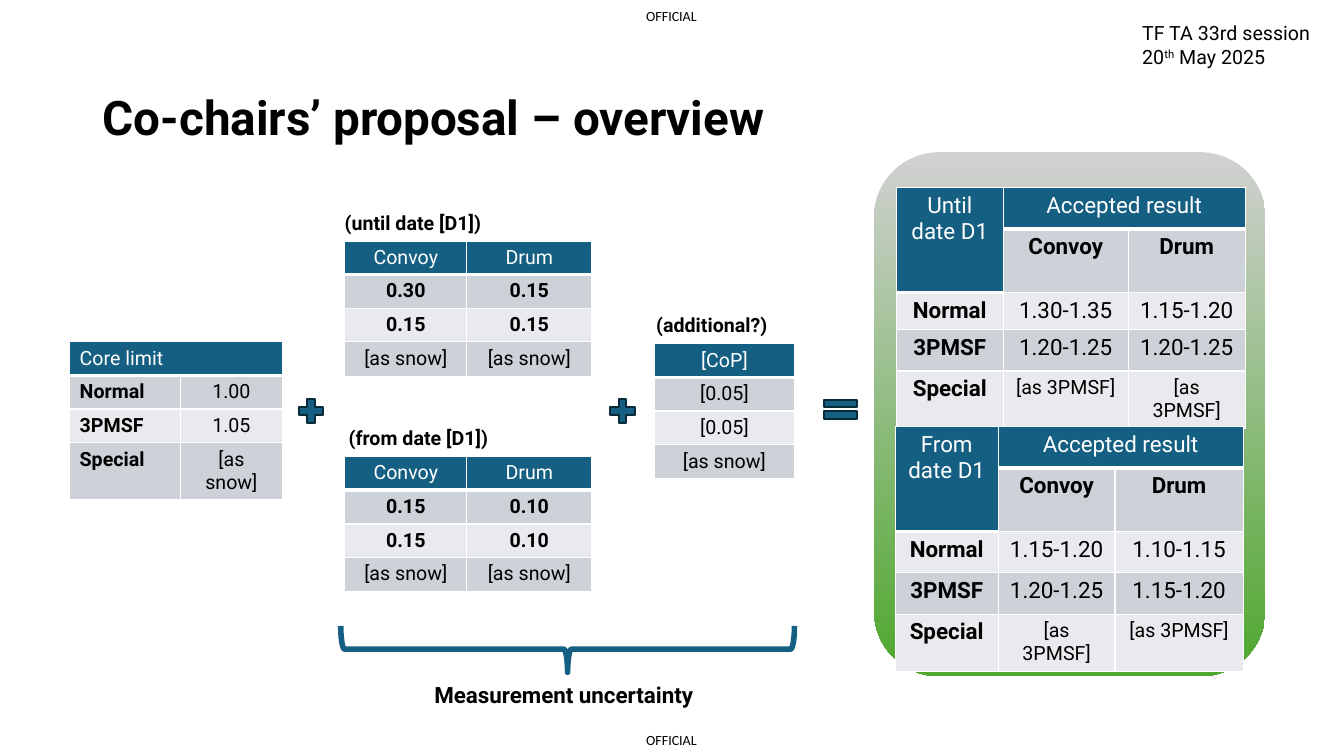
from lxml import etree
from pptx import Presentation
from pptx.dml.color import RGBColor
from pptx.enum.shapes import MSO_SHAPE
from pptx.enum.text import MSO_ANCHOR, PP_ALIGN
from pptx.oxml.ns import qn
from pptx.util import Inches, Pt

PLUS, EQUAL = MSO_SHAPE.MATH_PLUS, MSO_SHAPE.MATH_EQUAL
PANEL, BRACE = MSO_SHAPE.ROUNDED_RECTANGLE, MSO_SHAPE.LEFT_BRACE
LEFT, CENTER = PP_ALIGN.LEFT, PP_ALIGN.CENTER
MIDDLE = MSO_ANCHOR.MIDDLE
BLUE, NAVY, BLACK, WHITE = "156082", "092A39", "000000", "FFFFFF"
BANDS = ["E8EAED", "CCD2D8"]
SNOW, SAME = "[as snow]", "[as 3PMSF]"


def color(code):
    return RGBColor.from_string(code)


def style(par, size, bold=False, ink=BLACK, face="Roboto", align=LEFT):
    par.alignment = align
    font = par.font
    font.name, font.size, font.bold = face, Pt(size), bold
    font.color.rgb = color(ink)


def label(slide, box, text, size=14, bold=True, face="Roboto", inset=True, wrap=False):
    frame = slide.shapes.add_textbox(*map(Inches, box)).text_frame
    frame.word_wrap = wrap
    if not inset:
        frame.margin_left = frame.margin_right = 0
        frame.margin_top = frame.margin_bottom = 0
    frame.text = text
    for par in frame.paragraphs:
        style(par, size, bold, face=face)
    return frame


def shape(slide, kind, box):
    item = slide.shapes.add_shape(kind, *map(Inches, box))
    item.shadow.inherit = False
    return item


def sign(slide, kind, box):
    item = shape(slide, kind, box)
    item.fill.solid()
    item.fill.fore_color.rgb = color(BLUE)
    item.line.color.rgb = color(NAVY)
    item.line.width = Pt(1.5)


def border(cell, head):
    props = cell._tc.get_or_add_tcPr()
    for side in ("lnL", "lnR", "lnT", "lnB"):
        width = 3 if head and side == "lnB" else 1
        line = etree.SubElement(props, qn("a:" + side), w=str(Pt(width)))
        fill = etree.SubElement(line, qn("a:solidFill"))
        etree.SubElement(fill, qn("a:srgbClr"), val=WHITE)


def grid(slide, left, top, cols, rows, data, bold, size=14, align=CENTER, spans=()):
    frame = slide.shapes.add_table(
        len(rows), len(cols), Inches(left), Inches(top), Inches(sum(cols)), Inches(sum(rows))
    )
    table = frame.table
    table.first_row = table.horz_banding = False
    for col, width in zip(table.columns, cols):
        col.width = Inches(width)
    for row, height in zip(table.rows, rows):
        row.height = Inches(height)
    for start, end in spans:
        table.cell(*start).merge(table.cell(*end))
    for r, line in enumerate(data):
        for c, text in enumerate(line):
            cell = table.cell(r, c)
            head = r == 0 or (0, 0) in [s for s, e in spans if e == (r, c)]
            border(cell, head)
            cell.fill.solid()
            cell.fill.fore_color.rgb = color(BLUE if head else BANDS[r % 2])
            if text:
                cell.text = text
                style(
                    cell.text_frame.paragraphs[0],
                    14 if text == SAME else size,
                    not head and bold(r, c),
                    WHITE if head else BLACK,
                    align=CENTER if c else align,
                )


def header(slide, left, top):
    title = slide.shapes.title
    title.left, title.top, title.width, title.height = map(Inches, (left, top, 11.75, 0.67))
    frame = title.text_frame
    frame.text = "Co-chairs’ proposal – overview"
    frame.vertical_anchor = MIDDLE
    style(frame.paragraphs[0], 34, True)
    for y in (0.07, 7.26):
        label(slide, (6.41, y, 0.53, 0.17), "OFFICIAL", 10, False, "Calibri", False)
    note = label(slide, (11.23, 0.16, 2.18, 0.57), "TF TA 33rd session\n20", bold=False, wrap=True)
    date = note.paragraphs[1]
    raised = date.add_run()
    raised.text = "th"
    raised._r.get_or_add_rPr().set("baseline", "30000")
    date.add_run().text = " May 2025"


def core(slide, left, top):
    data = [("Core limit", ""), ("Normal", "1.00"), ("3PMSF", "1.05"), ("Special", SNOW)]
    grid(slide, left, top, [1.1, 1.01], [0.31] * 3 + [0.35], data,
         lambda r, c: c == 0, align=LEFT, spans=[((0, 0), (0, 1))])


def margin(slide, left, top):
    rows = [0.33] * 3 + [0.34]
    stages = [
        ("(until date [D1])", -0.1, 0, [("0.30", "0.15"), ("0.15", "0.15")]),
        ("(from date [D1])", -0.06, 2.14, [("0.15", "0.10"), ("0.15", "0.10")]),
    ]
    for name, shift, drop, values in stages:
        y = top + drop
        label(slide, (left + shift, y - 0.35, 1.62, 0.34), name)
        data = [("Convoy", "Drum"), *values, (SNOW, SNOW)]
        grid(slide, left, y, [1.21, 1.24], rows, data, lambda r, c: r < 3)
    label(slide, (left + 2.99, top + 0.67, 1.33, 0.34), "(additional?)")
    extra = [("[CoP]",), ("[0.05]",), ("[0.05]",), (SNOW,)]
    grid(slide, left + 3.07, top + 1.02, [1.39], rows, extra, lambda r, c: False)
    brace = shape(slide, BRACE, (left + 1.98, top + 1.8, 0.46, 4.5))
    brace.rotation = 270
    brace.fill.background()
    brace.line.color.rgb = color(BLUE)
    brace.line.width = Pt(4)
    label(slide, (left + 0.79, top + 4.32, 2.84, 0.37), "Measurement uncertainty", 16)


def result(slide, left, top):
    panel = shape(slide, PANEL, (left, top, 3.88, 5.2))
    panel.line.fill.background()
    panel.fill.gradient()
    panel.fill.gradient_angle = 270
    for stop, code in zip(panel.fill.gradient_stops, ("D1D1D1", "4EA72E")):
        stop.color.rgb = color(code)
    stages = [
        ("Until date D1", 0.22, 0.35, [1.06, 1.24, 1.16], 0.33,
         ("1.30-1.35", "1.15-1.20"), ("1.20-1.25", "1.20-1.25")),
        ("From date D1", 0.21, 2.72, [1.02, 1.16, 1.27], 0.41,
         ("1.15-1.20", "1.10-1.15"), ("1.20-1.25", "1.15-1.20")),
    ]
    spans = [((0, 0), (1, 0)), ((0, 1), (0, 2))]
    for name, x, y, cols, third, normal, heavy in stages:
        data = [
            (name, "Accepted result", ""),
            ("", "Convoy", "Drum"),
            ("Normal", *normal),
            ("3PMSF", *heavy),
            ("Special", SAME, SAME),
        ]
        rows = [0.41, 0.41, third, 0.41, 0.41]
        grid(slide, left + x, top + y, cols, rows, data,
             lambda r, c: r == 1 or c == 0, 16, spans=spans)


def main():
    deck = Presentation()
    deck.slide_width, deck.slide_height = Inches(13.33), Inches(7.5)
    slide = deck.slides.add_slide(deck.slide_layouts[5])
    header(slide, 0.92, 0.82)
    core(slide, 0.69, 3.39)
    margin(slide, 3.42, 2.39)
    for x in (2.92, 6.01):
        sign(slide, PLUS, (x, 3.92, 0.33, 0.32))
    sign(slide, EQUAL, (8.11, 3.9, 0.45, 0.32))
    result(slide, 8.67, 1.51)
    deck.save("out.pptx")


if __name__ == "__main__":
    main()
